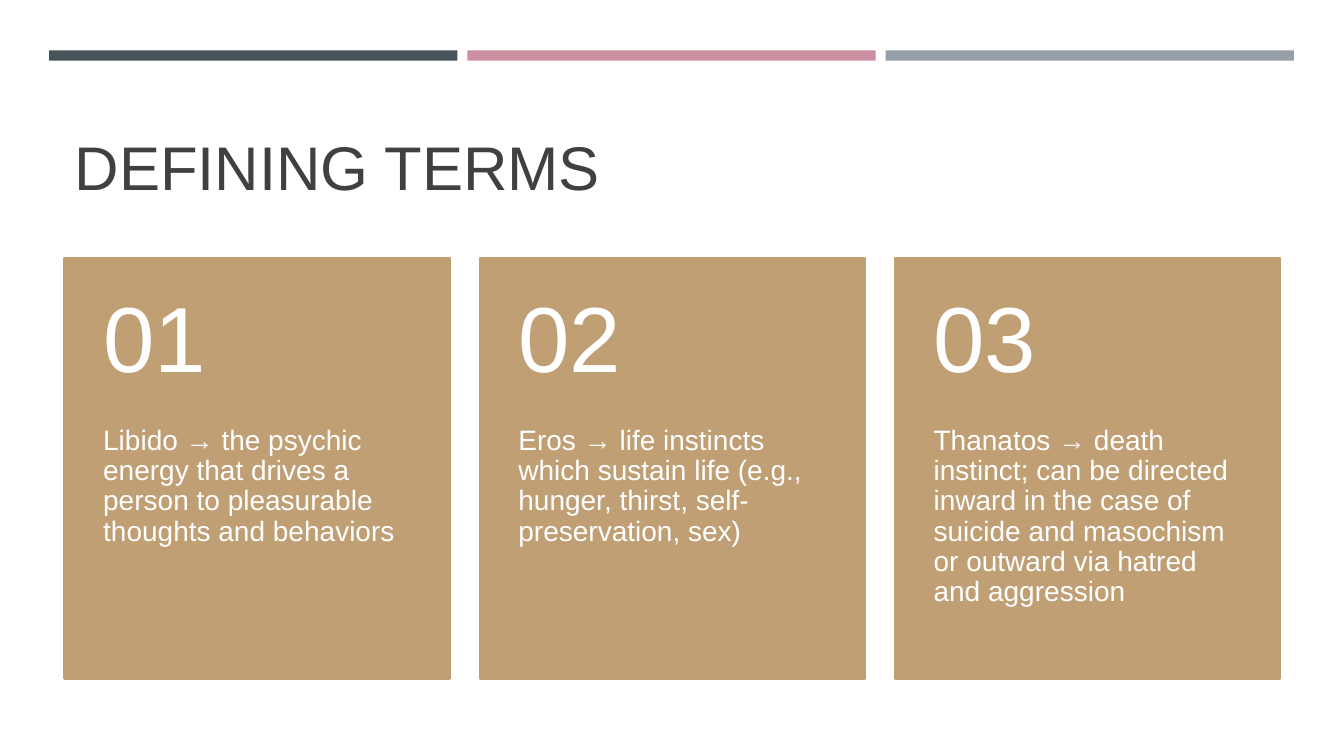
from pptx import Presentation
from pptx.dml.color import RGBColor
from pptx.enum.shapes import MSO_SHAPE
from pptx.enum.text import MSO_ANCHOR, MSO_AUTO_SIZE, PP_ALIGN
from pptx.util import Cm, Pt

RECTANGLE = MSO_SHAPE.RECTANGLE
TOP, MIDDLE, BOTTOM = MSO_ANCHOR.TOP, MSO_ANCHOR.MIDDLE, MSO_ANCHOR.BOTTOM
LEFT = PP_ALIGN.LEFT
NO_AUTOFIT = MSO_AUTO_SIZE.NONE

FONT = "Arial"
WHITE, CHARCOAL, TAN = "FFFFFF", "404040", "C09F74"
BAR_COLOURS = ["465359", "CC90A0", "969FA7"]
DEFINITIONS = [
    "Libido → the psychic energy that drives a person to pleasurable thoughts and behaviors",
    "Eros → life instincts which sustain life (e.g., hunger, thirst, self-preservation, sex)",
    "Thanatos → death instinct; can be directed inward in the case of suicide "
    "and masochism or outward via hatred and aggression",
]


def colour(hex_value):
    return RGBColor.from_string(hex_value)


def write(frame, text, size, hex_value, anchor, insets):
    frame.text = text
    frame.word_wrap = True
    frame.auto_size = NO_AUTOFIT
    frame.vertical_anchor = anchor
    frame.margin_left, frame.margin_top, frame.margin_right, frame.margin_bottom = map(Cm, insets)
    paragraph = frame.paragraphs[0]
    paragraph.alignment = LEFT
    paragraph.line_spacing = 0.9
    font = paragraph.runs[0].font
    font.name = FONT
    font.size = Pt(size)
    font.color.rgb = colour(hex_value)


def add_rectangle(slide, left, top, width, height, fill):
    rectangle = slide.shapes.add_shape(RECTANGLE, Cm(left), Cm(top), Cm(width), Cm(height))
    rectangle.shadow.inherit = False
    rectangle.fill.solid()
    rectangle.fill.fore_color.rgb = colour(fill)
    rectangle.line.fill.background()
    return rectangle


def add_bars(slide, left, top, width, height, gap=0.25):
    bar_width = (width - gap * (len(BAR_COLOURS) - 1)) / len(BAR_COLOURS)
    for index, fill in enumerate(BAR_COLOURS):
        add_rectangle(slide, left + index * (bar_width + gap), top, bar_width, height, fill)


def add_title(slide, left, top, width, height):
    title = slide.shapes.title
    title.left, title.top, title.width, title.height = map(Cm, (left, top, width, height))
    write(title.text_frame, "DEFINING TERMS", 44, CHARCOAL, BOTTOM, (0.25, 0.13, 0.25, 0.13))


def add_card(slide, left, top, width, height, number, definition):
    card = add_rectangle(slide, left, top, width, height, TAN)
    card.line.color.rgb = colour(TAN)
    card.line.width = Pt(1.75)
    number_height = height * 0.4
    definition_box = slide.shapes.add_textbox(
        Cm(left), Cm(top + number_height), Cm(width), Cm(height - number_height))
    write(definition_box.text_frame, definition, 20, WHITE, TOP, (0.97, 0, 0.97, 0.91))
    number_box = slide.shapes.add_textbox(Cm(left), Cm(top), Cm(width), Cm(number_height))
    write(number_box.text_frame, number, 66, WHITE, MIDDLE, (0.97, 0.46, 0.97, 0.46))


def add_cards(slide, left, top, width, height, gap=0.76):
    card_width = (width - gap * (len(DEFINITIONS) - 1)) / len(DEFINITIONS)
    for index, definition in enumerate(DEFINITIONS):
        card_left = left + index * (card_width + gap)
        add_card(slide, card_left, top, card_width, height, f"{index + 1:02}", definition)


def main():
    presentation = Presentation()
    presentation.slide_width, presentation.slide_height = Cm(33.87), Cm(19.05)
    slide = presentation.slides.add_slide(presentation.slide_layouts[5])
    add_bars(slide, 1.24, 1.27, 31.37, 0.26)
    add_title(slide, 1.63, 1.96, 30.63, 3.3)
    add_cards(slide, 1.63, 6.5, 30.63, 10.6)
    presentation.save("out.pptx")


if __name__ == "__main__":
    main()
